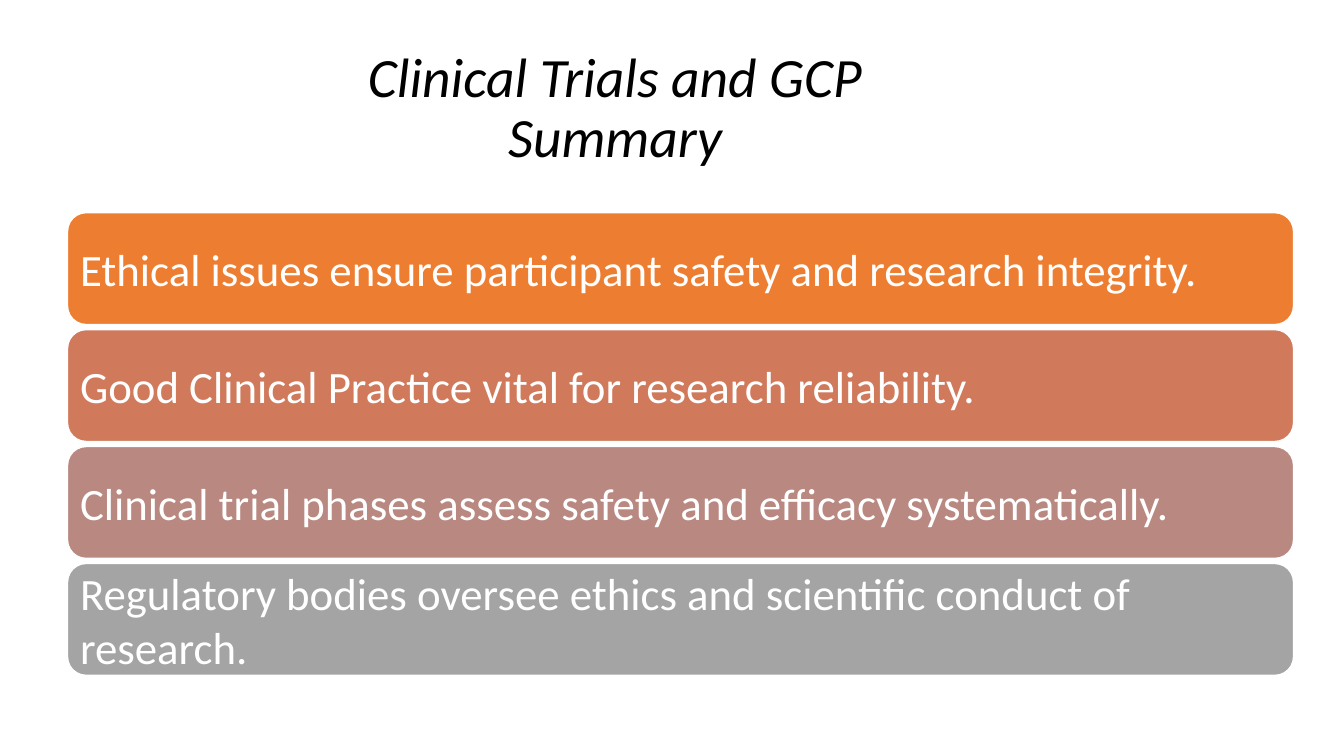
"""Build the Clinical Trials and GCP summary slide."""
import pptx
import pptx.util
import pptx.dml.color
import pptx.enum.shapes
import pptx.enum.text

Inches, Pt = pptx.util.Inches, pptx.util.Pt
ALIGN = pptx.enum.text.PP_ALIGN
MIDDLE = pptx.enum.text.MSO_ANCHOR.MIDDLE

TITLE = "Clinical Trials and GCP Summary"
POINTS = [
    ("Ethical issues ensure participant safety and research integrity.", "orange"),
    ("Good Clinical Practice vital for research reliability.", "terracotta"),
    ("Clinical trial phases assess safety and efficacy systematically.", "rose"),
    ("Regulatory bodies oversee ethics and scientific conduct of research.", "gray"),
]
COLORS = {
    "black": "000000",
    "white": "FFFFFF",
    "orange": "ED7D31",
    "terracotta": "D07A5B",
    "rose": "B88881",
    "gray": "A4A4A4",
}
FONT = "Calibri"
BAR_LEFT, BAR_TOP, BAR_WIDTH, BAR_HEIGHT = 0.67, 2.11, 12.16, 1.11
BAR_PITCH = 1.16


def color(name):
    return pptx.dml.color.RGBColor.from_string(COLORS[name])


def write(sp, text, size, color_name, align, inset_x, inset_y, italic=False):
    tf = sp.text_frame
    tf.word_wrap = True
    tf.auto_size = pptx.enum.text.MSO_AUTO_SIZE.NONE
    tf.vertical_anchor = MIDDLE
    tf.margin_left = tf.margin_right = Inches(inset_x)
    tf.margin_top = tf.margin_bottom = Inches(inset_y)
    p = tf.paragraphs[0]
    p.alignment = align
    r = p.add_run()
    r.text = text
    r.font.name = FONT
    r.font.size = Pt(size)
    r.font.italic = italic
    r.font.color.rgb = color(color_name)
    return p


def add_title(slide):
    sp = slide.shapes.title
    sp.left, sp.top = Inches(2.81), Inches(0.5)
    sp.width, sp.height = Inches(6.58), Inches(1.18)
    p = write(sp, TITLE, 39.6, "black", ALIGN.CENTER, 0.1, 0.05, italic=True)
    p.line_spacing = 0.9


def add_bar(slide, index, text, fill):
    sp = slide.shapes.add_shape(
        pptx.enum.shapes.MSO_SHAPE.ROUNDED_RECTANGLE,
        Inches(BAR_LEFT), Inches(BAR_TOP + index * BAR_PITCH),
        Inches(BAR_WIDTH), Inches(BAR_HEIGHT))
    sp.shadow.inherit = False
    sp.fill.solid()
    sp.fill.fore_color.rgb = color(fill)
    sp.line.color.rgb = color("white")
    sp.line.width = Pt(1)
    write(sp, text, 32, "white", ALIGN.LEFT, 0.07, 0.07)


def main():
    prs = pptx.Presentation()
    prs.slide_width, prs.slide_height = Inches(13.33), Inches(7.5)
    slide = prs.slides.add_slide(prs.slide_layouts[5])
    add_title(slide)
    for index, (text, fill) in enumerate(POINTS):
        add_bar(slide, index, text, fill)
    prs.save("out.pptx")


if __name__ == "__main__":
    main()
